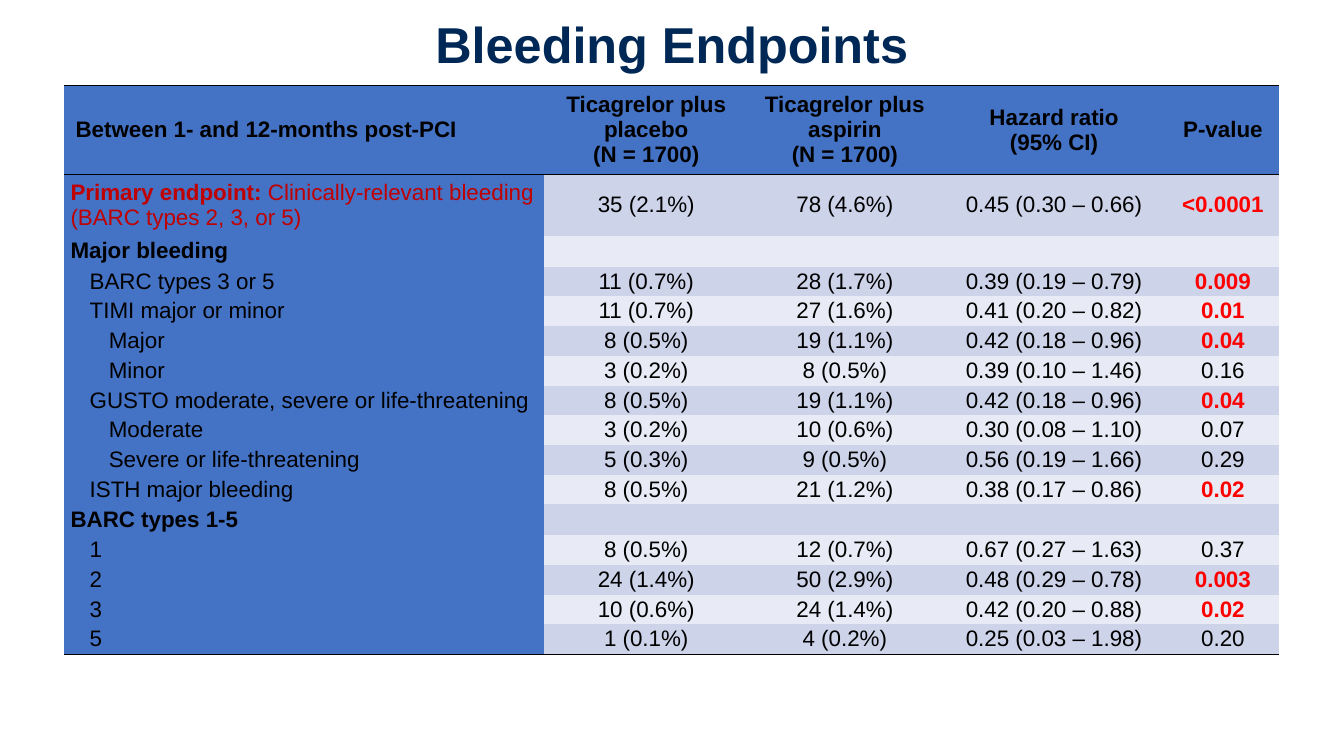
from lxml.etree import SubElement
from pptx import Presentation
from pptx.dml.color import RGBColor
from pptx.enum.text import MSO_ANCHOR, MSO_AUTO_SIZE, PP_ALIGN
from pptx.oxml.ns import qn
from pptx.util import Inches, Pt

COLORS = {
    "title": "002856",
    "text": "000000",
    "primary": "C00000",
    "significant": "FF0000",
    "label_fill": "4472C4",
    "band_dark": "CDD4EA",
    "band_light": "E8EBF5",
    "rule": "000000",
}
NO_STYLE = "{2D5ABB26-0587-4C30-8999-92F81FD0307C}"
COLUMN_WIDTHS = [4.77, 2.01, 1.93, 2.22, 1.13]
HEADER_HEIGHT, PRIMARY_HEIGHT = 0.88, 0.61
INDENT = 0.19

HEADINGS = [
    ["Between 1- and 12-months post-PCI"],
    ["Ticagrelor plus placebo", "(N = 1700)"],
    ["Ticagrelor plus aspirin", "(N = 1700)"],
    ["Hazard ratio", "(95% CI)"],
    ["P-value"],
]
PRIMARY = ("Primary endpoint: ", "Clinically-relevant bleeding (BARC types 2, 3, or 5)")
# Indent level, label, then placebo, aspirin, hazard ratio and P-value
ENDPOINTS = [
    (0, PRIMARY, "35 (2.1%)", "78 (4.6%)", "0.45 (0.30 – 0.66)", "<0.0001"),
    (0, "Major bleeding"),
    (1, "BARC types 3 or 5", "11 (0.7%)", "28 (1.7%)", "0.39 (0.19 – 0.79)", "0.009"),
    (1, "TIMI major or minor", "11 (0.7%)", "27 (1.6%)", "0.41 (0.20 – 0.82)", "0.01"),
    (2, "Major", "8 (0.5%)", "19 (1.1%)", "0.42 (0.18 – 0.96)", "0.04"),
    (2, "Minor", "3 (0.2%)", "8 (0.5%)", "0.39 (0.10 – 1.46)", "0.16"),
    (1, "GUSTO moderate, severe or life-threatening",
     "8 (0.5%)", "19 (1.1%)", "0.42 (0.18 – 0.96)", "0.04"),
    (2, "Moderate", "3 (0.2%)", "10 (0.6%)", "0.30 (0.08 – 1.10)", "0.07"),
    (2, "Severe or life-threatening", "5 (0.3%)", "9 (0.5%)", "0.56 (0.19 – 1.66)", "0.29"),
    (1, "ISTH major bleeding", "8 (0.5%)", "21 (1.2%)", "0.38 (0.17 – 0.86)", "0.02"),
    (0, "BARC types 1-5"),
    (1, "1", "8 (0.5%)", "12 (0.7%)", "0.67 (0.27 – 1.63)", "0.37"),
    (1, "2", "24 (1.4%)", "50 (2.9%)", "0.48 (0.29 – 0.78)", "0.003"),
    (1, "3", "10 (0.6%)", "24 (1.4%)", "0.42 (0.20 – 0.88)", "0.02"),
    (1, "5", "1 (0.1%)", "4 (0.2%)", "0.25 (0.03 – 1.98)", "0.20"),
]


def write(paragraph, text, size=16, color="text", bold=False, align=PP_ALIGN.LEFT):
    paragraph.alignment = align
    run = paragraph.add_run()
    run.text = text
    run.font.name = "Arial"
    run.font.size = Pt(size)
    run.font.bold = bold
    run.font.color.rgb = RGBColor.from_string(COLORS[color])


def prepare_cell(cell, fill, left=0.07):
    """Fill the cell, set its margins and return its first paragraph."""
    cell.fill.solid()
    cell.fill.fore_color.rgb = RGBColor.from_string(COLORS[fill])
    cell.vertical_anchor = MSO_ANCHOR.MIDDLE
    cell.margin_left, cell.margin_right = Inches(left), Inches(0.06)
    cell.margin_top = cell.margin_bottom = 0
    return cell.text_frame.paragraphs[0]


def rule_cell(cell, *sides):
    """Draw a rule on the given sides: lnT for top, lnB for bottom."""
    properties = cell._tc.get_or_add_tcPr()
    for position, side in enumerate(sides):
        line = SubElement(properties, qn(f"a:{side}"), w=str(Pt(1)))
        solid = SubElement(line, qn("a:solidFill"))
        SubElement(solid, qn("a:srgbClr"), val=COLORS["rule"])
        properties.insert(position, line)


def add_title(slide, left, top, width, height):
    title = slide.shapes.title
    title.left, title.top = Inches(left), Inches(top)
    title.width, title.height = Inches(width), Inches(height)
    frame = title.text_frame
    frame.word_wrap = True
    frame.auto_size = MSO_AUTO_SIZE.NONE
    frame.vertical_anchor = MSO_ANCHOR.MIDDLE
    heading = frame.paragraphs[0]
    heading.line_spacing = 0.9
    write(heading, "Bleeding Endpoints", size=36, color="title", bold=True,
          align=PP_ALIGN.CENTER)


def fill_header(table):
    for column, lines in enumerate(HEADINGS):
        cell = table.cell(0, column)
        paragraph = prepare_cell(cell, "label_fill", left=0.07 if column else 0.12)
        align = PP_ALIGN.CENTER if column else PP_ALIGN.LEFT
        for number, line in enumerate(lines):
            if number:
                paragraph = cell.text_frame.add_paragraph()
            write(paragraph, line, bold=True, align=align)
        rule_cell(cell, "lnT", "lnB")


def fill_endpoint(table, row, level, label, *results):
    label_paragraph = prepare_cell(table.cell(row, 0), "label_fill",
                                   left=0.07 + INDENT * level)
    if label is PRIMARY:
        for part, bold in zip(label, (True, False)):
            write(label_paragraph, part, color="primary", bold=bold)
    else:
        write(label_paragraph, label, bold=level == 0)

    band = "band_dark" if row % 2 else "band_light"
    result_paragraphs = [prepare_cell(table.cell(row, column), band)
                         for column in range(1, len(COLUMN_WIDTHS))]
    if results:
        *estimates, p_value = results
        for paragraph, estimate in zip(result_paragraphs, estimates):
            write(paragraph, estimate, align=PP_ALIGN.CENTER)
        significant = float(p_value.lstrip("<")) < 0.05
        write(result_paragraphs[-1], p_value, bold=significant, align=PP_ALIGN.CENTER,
              color="significant" if significant else "text")


def add_endpoint_table(slide, left, top, width, height):
    frame = slide.shapes.add_table(len(ENDPOINTS) + 1, len(COLUMN_WIDTHS),
                                   Inches(left), Inches(top), Inches(width), Inches(height))
    table = frame.table
    table.first_row = table.horz_banding = False
    for style in frame._element.iter(qn("a:tableStyleId")):
        style.text = NO_STYLE

    scale = width / sum(COLUMN_WIDTHS)
    for column, column_width in zip(table.columns, COLUMN_WIDTHS):
        column.width = Inches(column_width * scale)
    plain_rows = len(ENDPOINTS) - 1
    plain_height = (height - HEADER_HEIGHT - PRIMARY_HEIGHT) / plain_rows
    heights = [HEADER_HEIGHT, PRIMARY_HEIGHT] + [plain_height] * plain_rows
    for row, row_height in zip(table.rows, heights):
        row.height = Inches(row_height)

    fill_header(table)
    for row, endpoint in enumerate(ENDPOINTS, start=1):
        fill_endpoint(table, row, *endpoint)
    for column in range(len(COLUMN_WIDTHS)):
        rule_cell(table.cell(len(ENDPOINTS), column), "lnB")


def main():
    presentation = Presentation()
    presentation.slide_width, presentation.slide_height = Inches(13.33), Inches(7.5)
    slide = presentation.slides.add_slide(presentation.slide_layouts[5])
    add_title(slide, 0, 0.1, 13.33, 0.74)
    add_endpoint_table(slide, 0.63, 0.85, 12.06, 5.62)
    presentation.save("out.pptx")


if __name__ == "__main__":
    main()
